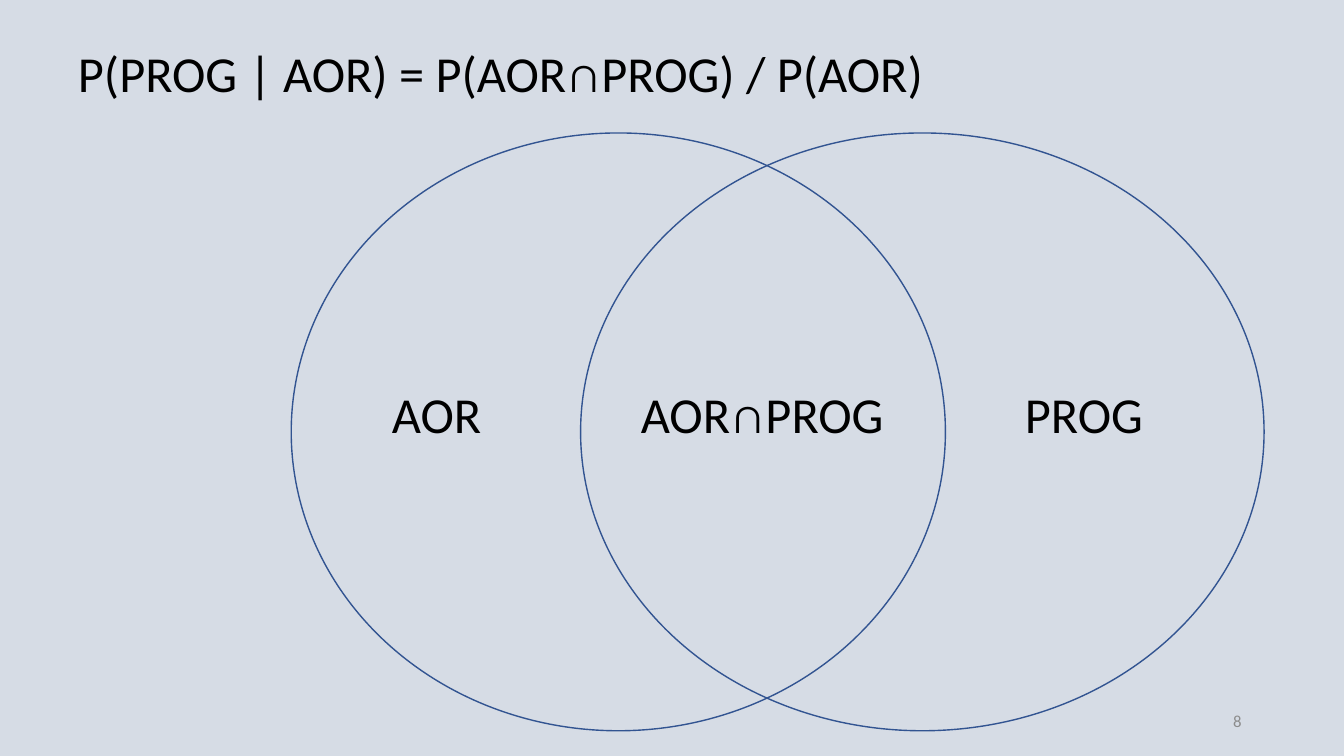
from dataclasses import dataclass

from pptx import Presentation
from pptx.dml.color import RGBColor
from pptx.enum.shapes import MSO_SHAPE
from pptx.enum.text import MSO_ANCHOR, MSO_AUTO_SIZE, PP_ALIGN
from pptx.shapes.autoshape import Shape
from pptx.slide import Slide
from pptx.util import Pt


@dataclass(frozen=True)
class Theme:
    back: RGBColor = RGBColor(0xD6, 0xDC, 0xE5)
    line: RGBColor = RGBColor(0x32, 0x54, 0x91)
    ink: RGBColor = RGBColor(0, 0, 0)
    gray: RGBColor = RGBColor(0x8C, 0x8C, 0x8C)
    font: str = "Calibri"
    large: float = 36
    small: float = 12


@dataclass(frozen=True)
class Ring:
    left: float
    width: float


@dataclass(frozen=True)
class Label:
    text: str
    left: float
    width: float


THEME = Theme()
RING_TOP, RING_HEIGHT = 95, 427
LABEL_TOP, LABEL_HEIGHT = 270, 51
RINGS = [Ring(208, 467.3), Ring(414.7, 488.2)]
LABELS = [
    Label("AOR", 272.9, 105.8),
    Label("PROG", 725, 123.8),
    Label("AOR∩PROG", 450.7, 205.2),
]


def write(shape: Shape, text: str, size: float, color: RGBColor,
          align: PP_ALIGN, anchor: MSO_ANCHOR) -> None:
    frame = shape.text_frame
    frame.text = text
    frame.word_wrap = True
    frame.auto_size = MSO_AUTO_SIZE.NONE
    frame.vertical_anchor = anchor
    line = frame.paragraphs[0]
    line.alignment = align
    for run in line.runs:
        run.font.name = THEME.font
        run.font.size = Pt(size)
        run.font.color.rgb = color


def draw_title(slide: Slide, text: str) -> None:
    title = slide.shapes.title
    title.left, title.top = Pt(48.5), Pt(26.6)
    title.width, title.height = Pt(627), Pt(LABEL_HEIGHT)
    write(title, text, THEME.large, THEME.ink, PP_ALIGN.LEFT, MSO_ANCHOR.TOP)
    title.text_frame.word_wrap = False


def draw_ring(slide: Slide, ring: Ring) -> None:
    oval = slide.shapes.add_shape(
        MSO_SHAPE.OVAL, Pt(ring.left), Pt(RING_TOP), Pt(ring.width), Pt(RING_HEIGHT))
    oval.shadow.inherit = False
    oval.fill.background()
    oval.line.color.rgb = THEME.line
    oval.line.width = Pt(1)


def draw_label(slide: Slide, label: Label) -> None:
    box = slide.shapes.add_textbox(
        Pt(label.left), Pt(LABEL_TOP), Pt(label.width), Pt(LABEL_HEIGHT))
    write(box, label.text, THEME.large, THEME.ink, PP_ALIGN.LEFT, MSO_ANCHOR.TOP)


def draw_number(slide: Slide, text: str) -> None:
    box = slide.shapes.add_textbox(Pt(678), Pt(500.5), Pt(216), Pt(28.8))
    write(box, text, THEME.small, THEME.gray, PP_ALIGN.RIGHT, MSO_ANCHOR.MIDDLE)


def main() -> None:
    deck = Presentation()
    deck.slide_width, deck.slide_height = Pt(960), Pt(540)
    slide = deck.slides.add_slide(deck.slide_layouts.get_by_name("Title Only"))
    slide.background.fill.solid()
    slide.background.fill.fore_color.rgb = THEME.back
    draw_title(slide, "P(PROG | AOR) = P(AOR∩PROG) / P(AOR)")
    for ring in RINGS:
        draw_ring(slide, ring)
    for label in LABELS:
        draw_label(slide, label)
    draw_number(slide, "8")
    deck.save("out.pptx")


if __name__ == "__main__":
    main()
